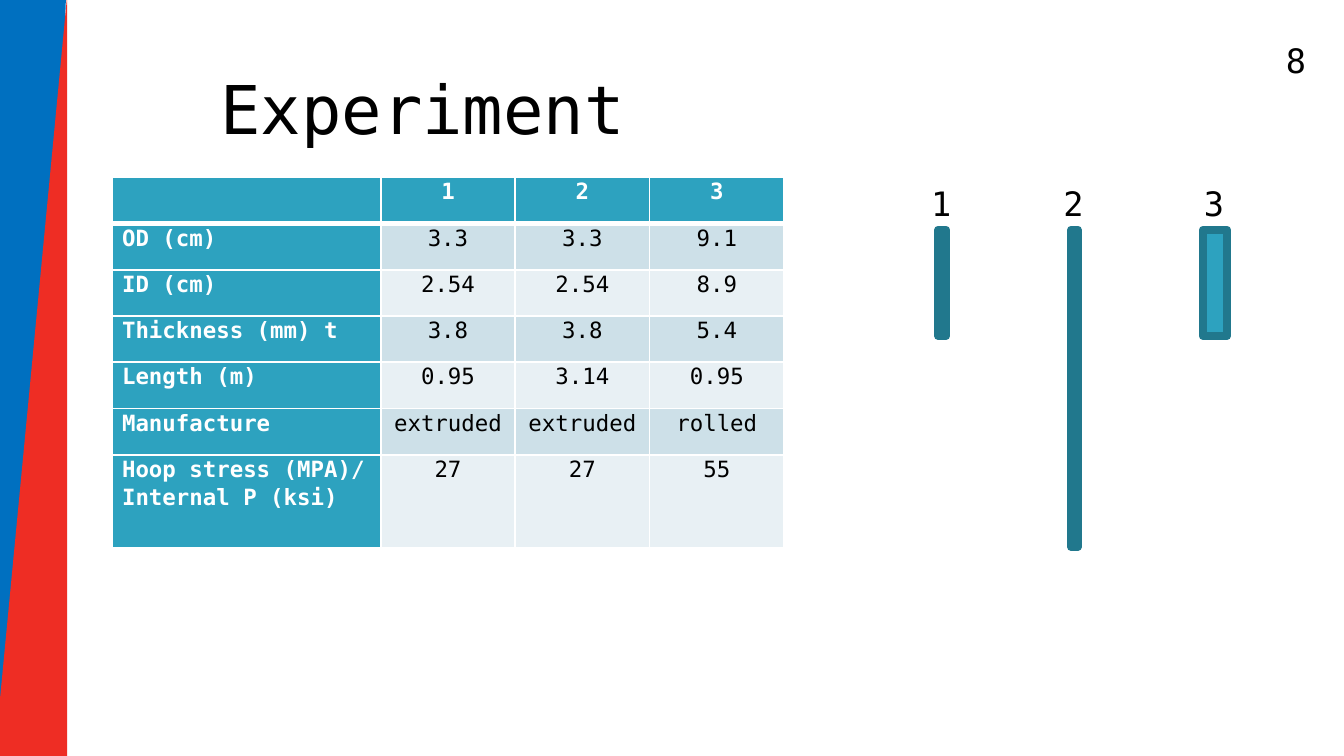
from lxml import etree
from pptx import Presentation
from pptx.dml.color import RGBColor
from pptx.enum import shapes, text
from pptx.oxml.ns import qn
from pptx.util import Pt

FONT = "DejaVu Sans Mono"
COLORS = {
    "black": "000000", "white": "FFFFFF", "blue": "0070C0", "red": "EE2D24",
    "teal": "2DA2BF", "dark_teal": "21788D",
    "odd_row": "CDE0E8", "even_row": "E8F0F4",
}
ROWS = [
    ("", "1", "2", "3"),
    ("OD (cm)", "3.3", "3.3", "9.1"),
    ("ID (cm)", "2.54", "2.54", "8.9"),
    ("Thickness (mm) t", "3.8", "3.8", "5.4"),
    ("Length (m)", "0.95", "3.14", "0.95"),
    ("Manufacture", "extruded", "extruded", "rolled"),
    ("Hoop stress (MPA)/\nInternal P (ksi)", "27", "27", "55"),
]
# label, left, width and height of each tube
TUBES = [("1", 502.6, 4.3, 56.9), ("2", 573.8, 3.6, 169.9), ("3", 644.4, 13, 56.9)]


def rgb(name):
    return RGBColor.from_string(COLORS[name])


def paint(target, name):
    target.fill.solid()
    target.fill.fore_color.rgb = rgb(name)


def write(tf, content, size, color="black", bold=False, align="LEFT", spacing=None):
    for i, line in enumerate(content.split("\n")):
        p = tf.add_paragraph() if i else tf.paragraphs[0]
        p.alignment = getattr(text.PP_ALIGN, align)
        if spacing:
            p.line_spacing = spacing
        r = p.add_run()
        r.text = line
        r.font.name, r.font.size, r.font.bold = FONT, Pt(size), bold
        r.font.color.rgb = rgb(color)


def add_label(s, content, left, top, width, height, size=18):
    tf = s.shapes.add_textbox(Pt(left), Pt(top), Pt(width), Pt(height)).text_frame
    tf.word_wrap = False
    tf.auto_size = text.MSO_AUTO_SIZE.SHAPE_TO_FIT_TEXT
    write(tf, content, size)


def add_polygon(s, points, color):
    start, *rest = [(Pt(x), Pt(y)) for x, y in points]
    builder = s.shapes.build_freeform(*start)
    builder.add_line_segments(rest, close=True)
    sp = builder.convert_to_shape()
    sp.shadow.inherit = False
    paint(sp, color)
    sp.line.fill.background()


def add_side_band(s, left, right, height):
    add_polygon(s, [(right - 0.7, 0), (left, 0), (left, height), (19.4, height)], "blue")
    add_polygon(s, [(right, -5.8), (right, height), (left, height), (right, -2.2)], "red")


def set_borders(cell, bottom):
    tc_pr = cell._tc.get_or_add_tcPr()
    for i, (side, width) in enumerate([("L", 1), ("R", 1), ("T", 1), ("B", bottom)]):
        ln = etree.Element(qn("a:ln" + side), w=str(Pt(width)))
        fill = etree.SubElement(ln, qn("a:solidFill"))
        etree.SubElement(fill, qn("a:srgbClr"), val=COLORS["white"])
        tc_pr.insert(i, ln)


def add_tube_table(s, left, top, width, height):
    table = s.shapes.add_table(len(ROWS), len(ROWS[0]), Pt(left), Pt(top),
                               Pt(width), Pt(height)).table
    column, row_height = width / 5, height / 8
    for c, col in enumerate(table.columns):
        col.width = Pt(column if c else 2 * column)
    for r, values in enumerate(ROWS):
        table.rows[r].height = Pt(row_height * (2 if r == len(ROWS) - 1 else 1))
        for c, value in enumerate(values):
            cell = table.cell(r, c)
            heading = r == 0 or c == 0
            cell.margin_left = cell.margin_right = Pt(5.4)
            cell.margin_top = cell.margin_bottom = 0
            paint(cell, "teal" if heading else "odd_row" if r % 2 else "even_row")
            set_borders(cell, 1 if r else 3)
            write(cell.text_frame, value, 12, "white" if heading else "black",
                  heading, "CENTER" if c else "LEFT", 1.07)


def add_tubes(s, top):
    label_width, label_height = 25.9, 28.8
    for label, left, width, height in TUBES:
        sp = s.shapes.add_shape(shapes.MSO_SHAPE.RECTANGLE, Pt(left),
                                Pt(top + label_height), Pt(width), Pt(height))
        sp.shadow.inherit = False
        paint(sp, "teal")
        sp.line.color.rgb = rgb("dark_teal")
        sp.line.width = Pt(4.33)
        add_label(s, label, left + (width - label_width) / 2, top,
                  label_width, label_height)


def main():
    prs = Presentation()
    prs.slide_width, prs.slide_height = Pt(720), Pt(405)
    s = prs.slides.add_slide(prs.slide_layouts[6])
    add_side_band(s, -2.9, 36, 405)
    add_label(s, "Experiment", 110.9, 32.4, 234, 51, size=36)
    add_tube_table(s, 60, 95, 360, 198.4)
    add_tubes(s, 94.3)
    add_label(s, "8", 681.8, 18, 25.9, 28.8)
    prs.save("out.pptx")


if __name__ == "__main__":
    main()
